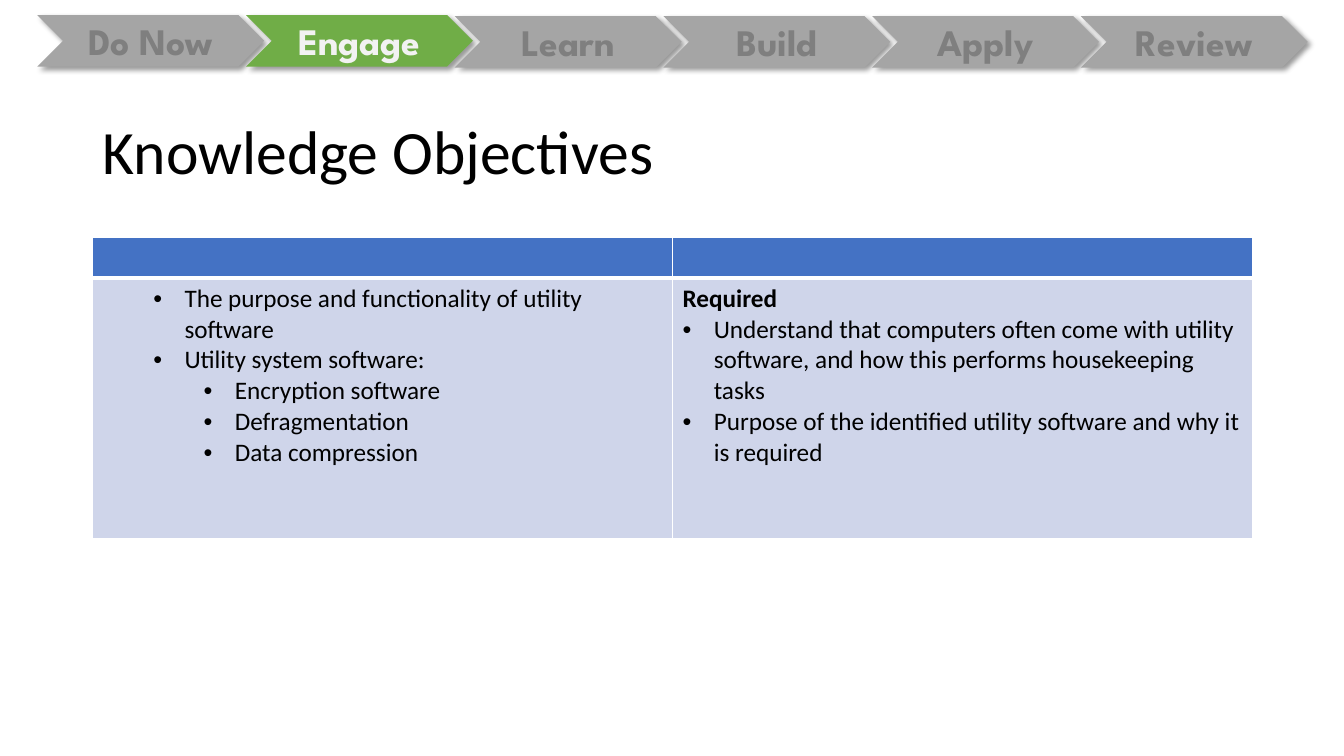
from lxml import etree
from pptx import Presentation
from pptx.dml.color import RGBColor
from pptx.enum.shapes import MSO_SHAPE as SHAPE
from pptx.enum.text import MSO_ANCHOR as ANCHOR, PP_ALIGN as ALIGN
from pptx.oxml import parse_xml
from pptx.oxml.ns import nsdecls, qn
from pptx.util import Pt

PX = 9144  # EMU per px, 100 px to the inch
COLORS = {
    "grey": "A5A5A5", "green": "70AD47", "dim": "7F7F7F", "light": "F2F2F2",
    "black": "000000", "white": "FFFFFF", "header": "4472C4", "body": "CFD5EA",
}


def rgb(name):
    return RGBColor.from_string(COLORS[name])


def write(p, text, size=18, font="Calibri", color="black", bold=False,
          align=ALIGN.LEFT, spacing=None, indent=None):
    p.alignment = align
    if spacing:
        p.line_spacing = spacing
    if indent:
        pPr = p._p.get_or_add_pPr()
        pPr.set("marL", str(indent * PX))
        pPr.set("indent", str(-31 * PX))
        etree.SubElement(pPr, qn("a:buFont"), typeface="Arial")
        etree.SubElement(pPr, qn("a:buChar"), char="•")
    r = p.add_run()
    r.text = text
    r.font.size, r.font.name, r.font.bold = Pt(size), font, bold
    r.font.color.rgb = rgb(color)


prs = Presentation()
prs.slide_width, prs.slide_height = 1333 * PX, 750 * PX
slide = prs.slides.add_slide(prs.slide_layouts[6])

# Lesson stages
stages = ["Do Now", "Engage", "Learn", "Build", "Apply", "Review"]
for i, stage in enumerate(stages):
    active = stage == "Engage"
    top = 15 if i < 2 else 16
    s = slide.shapes.add_shape(SHAPE.CHEVRON, (37 + 207 * i) * PX, top * PX,
                               225 * PX, 51 * PX)
    s.fill.solid()
    s.fill.fore_color.rgb = rgb("green" if active else "grey")
    s.line.fill.background()
    s.shadow.inherit = False
    s._element.spPr.find(qn("a:effectLst")).append(parse_xml(
        f'<a:outerShdw {nsdecls("a")} blurRad="{Pt(4)}" dist="{Pt(3)}" '
        'dir="2700000" algn="tl" rotWithShape="0"><a:srgbClr val="000000">'
        '<a:alpha val="40000"/></a:srgbClr></a:outerShdw>'))
    tf = s.text_frame
    tf.word_wrap = True
    tf.vertical_anchor = ANCHOR.MIDDLE
    write(tf.paragraphs[0], stage, size=26.7, font="League Spartan", bold=True,
          color="light" if active else "dim", align=ALIGN.CENTER)

# Title
tf = slide.shapes.add_textbox(92 * PX, 81 * PX, 1150 * PX, 145 * PX).text_frame
tf.word_wrap = True
tf.vertical_anchor = ANCHOR.MIDDLE
write(tf.paragraphs[0], "Knowledge Objectives", size=44, spacing=0.9)

# Objectives table: text and bullet indent of each paragraph
objectives = [
    [
        ("The purpose and functionality of utility software", 81),
        ("Utility system software:", 81),
        ("Encryption software", 131),
        ("Defragmentation", 131),
        ("Data compression", 131),
    ],
    [
        ("Required", None),
        ("Understand that computers often come with utility software, "
         "and how this performs housekeeping tasks", 31),
        ("Purpose of the identified utility software and why it is required", 31),
    ],
]
table = slide.shapes.add_table(2, 2, 92 * PX, 236 * PX, 1150 * PX, 298 * PX).table
table.rows[0].height, table.rows[1].height = 40 * PX, 258 * PX

for col, lines in enumerate(objectives):
    tf = table.cell(1, col).text_frame
    for i, (text, indent) in enumerate(lines):
        p = tf.add_paragraph() if i else tf.paragraphs[0]
        write(p, text, indent=indent, bold=indent is None)

# Cell borders and fills, with a thick line under the header
for row, (fill, thick) in enumerate([("header", "lnB"), ("body", "lnT")]):
    for col in range(2):
        cell = table.cell(row, col)
        tcPr = cell._tc.get_or_add_tcPr()
        for side in ("lnL", "lnR", "lnT", "lnB"):
            width = Pt(3 if side == thick else 1)
            tcPr.append(parse_xml(
                f'<a:{side} {nsdecls("a")} w="{width}"><a:solidFill>'
                f'<a:srgbClr val="{COLORS["white"]}"/></a:solidFill></a:{side}>'))
        cell.fill.solid()
        cell.fill.fore_color.rgb = rgb(fill)

prs.save("out.pptx")
